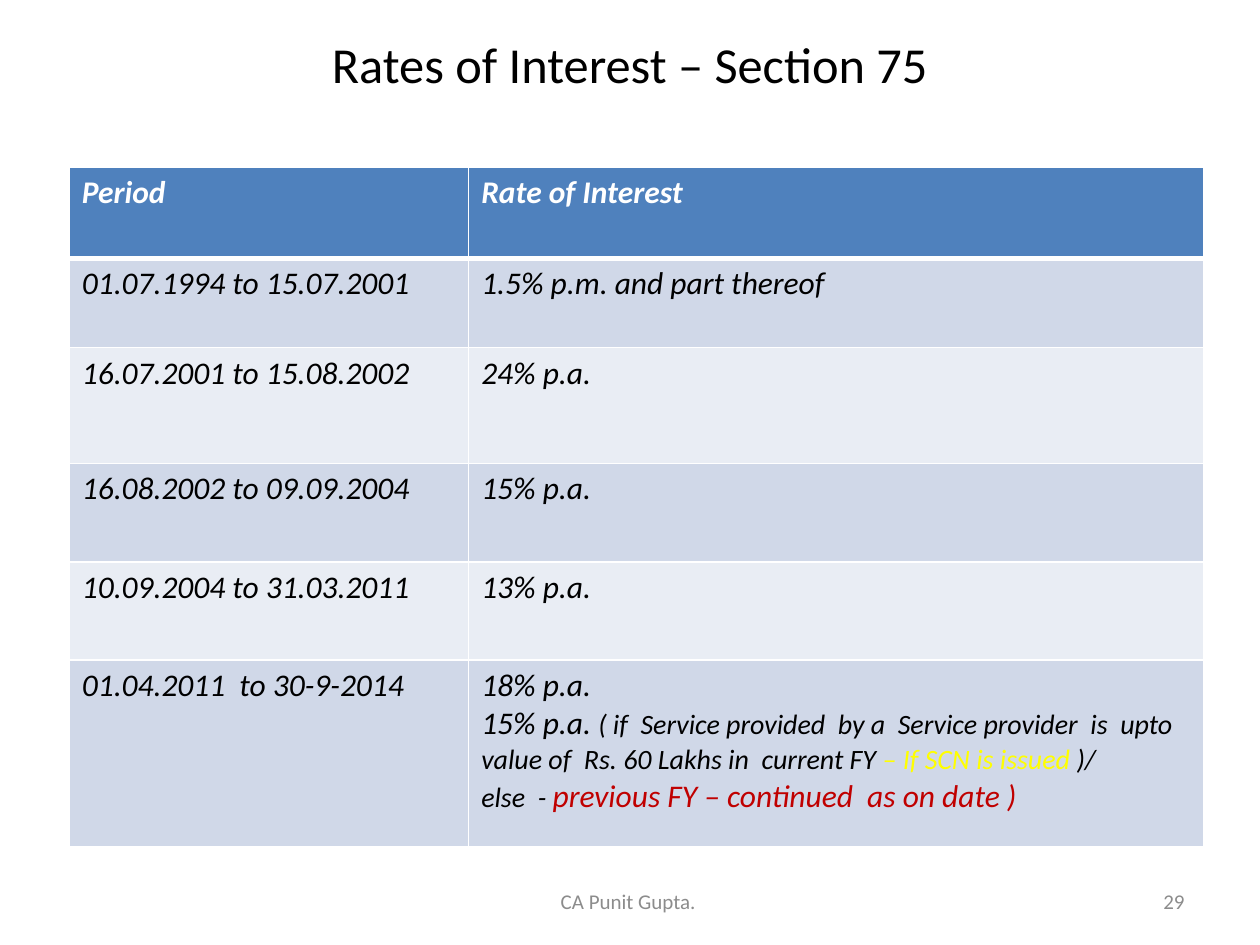
from dataclasses import dataclass

from lxml.etree import SubElement
from pptx import Presentation
from pptx.dml.color import RGBColor
from pptx.enum.text import MSO_ANCHOR, PP_ALIGN
from pptx.oxml.ns import qn
from pptx.util import Inches, Pt


@dataclass(frozen=True)
class Theme:
    font: str = "Calibri"
    black: str = "000000"
    white: str = "FFFFFF"
    grey: str = "8C8C8C"
    yellow: str = "FFFF00"
    red: str = "C00000"
    header: str = "4F81BD"
    bands: tuple = ("D0D8E8", "E9EDF4")
    title: float = 28.8
    body: float = 18
    note: float = 16
    footer: float = 12


T = Theme()
WIDTH, HEIGHT = 10, 7.5
MARGIN = WIDTH * 0.05
COLS = (3.17, 5.83)
ROWS = (0.72, 0.71, 0.92, 0.78, 0.78, 1.48)

RATES = [
    ("Period", "Rate of Interest"),
    ("01.07.1994 to 15.07.2001", "1.5% p.m. and part thereof"),
    ("16.07.2001 to 15.08.2002", "24% p.a."),
    ("16.08.2002 to 09.09.2004", "15% p.a."),
    ("10.09.2004 to 31.03.2011", "13% p.a."),
    ("01.04.2011  to 30-9-2014", "18% p.a."),
]
CONDITIONS = [
    ("15% p.a. ", {}),
    ("( if  Service provided  by a  Service provider  is  upto "
     "value of  Rs. 60 Lakhs in  current FY ", {"size": T.note}),
    ("– If SCN is issued ", {"size": T.note, "color": T.yellow}),
    (")/", {"size": T.note}),
    ("\n", {}),
    ("else  - ", {"size": T.note}),
    ("previous FY – continued  as on date )", {"color": T.red}),
]


def add_text(p, text, size=T.body, color=T.black, bold=False, italic=False):
    if text == "\n":
        p.add_line_break()
        return
    r = p.add_run()
    r.text = text
    r.font.name = T.font
    r.font.size = Pt(size)
    r.font.bold = bold
    r.font.italic = italic
    r.font.color.rgb = RGBColor.from_string(color)


def add_label(slide, text, left, top, width, height, align, **style):
    sp = slide.shapes.add_textbox(*map(Inches, (left, top, width, height)))
    tf = sp.text_frame
    tf.word_wrap = True
    tf.vertical_anchor = MSO_ANCHOR.MIDDLE
    p = tf.paragraphs[0]
    p.alignment = align
    add_text(p, text, **style)


def set_borders(cell, **widths):
    tc_pr = cell._tc.get_or_add_tcPr()
    for side in "LRTB":
        ln = SubElement(tc_pr, qn(f"a:ln{side}"), w=str(Pt(widths.get(side, 1))))
        fill = SubElement(ln, qn("a:solidFill"))
        SubElement(fill, qn("a:srgbClr"), val=T.white)


def add_rates_table(slide, left, top):
    size = map(Inches, (left, top, sum(COLS), sum(ROWS)))
    table = slide.shapes.add_table(len(ROWS), len(COLS), *size).table
    for column, width in zip(table.columns, COLS):
        column.width = Inches(width)
    for i, (row, height) in enumerate(zip(table.rows, ROWS)):
        row.height = Inches(height)
        head = i == 0
        for cell, text in zip(row.cells, RATES[i]):
            set_borders(cell, B=3 if head else 1, T=3 if i == 1 else 1)
            cell.fill.solid()
            color = T.header if head else T.bands[(i - 1) % 2]
            cell.fill.fore_color.rgb = RGBColor.from_string(color)
            add_text(cell.text_frame.paragraphs[0], text, bold=head, italic=True,
                     color=T.white if head else T.black)
    p = table.cell(len(ROWS) - 1, 1).text_frame.add_paragraph()
    for text, style in CONDITIONS:
        add_text(p, text, italic=True, **style)


def main():
    prs = Presentation()
    prs.slide_width, prs.slide_height = Inches(WIDTH), Inches(HEIGHT)
    slide = prs.slides.add_slide(prs.slide_layouts[6])
    add_label(slide, "Rates of Interest – Section 75", MARGIN, HEIGHT * 0.04,
              WIDTH - 2 * MARGIN, 0.4, PP_ALIGN.CENTER, size=T.title)
    add_rates_table(slide, 0.55, 1.33)
    footer = {"top": 6.95, "height": 0.4, "size": T.footer, "color": T.grey}
    add_label(slide, "CA Punit Gupta. ", left=3.42, width=3.17,
              align=PP_ALIGN.CENTER, **footer)
    add_label(slide, "29", left=7.17, width=2.33, align=PP_ALIGN.RIGHT, **footer)
    prs.save("out.pptx")


if __name__ == "__main__":
    main()
